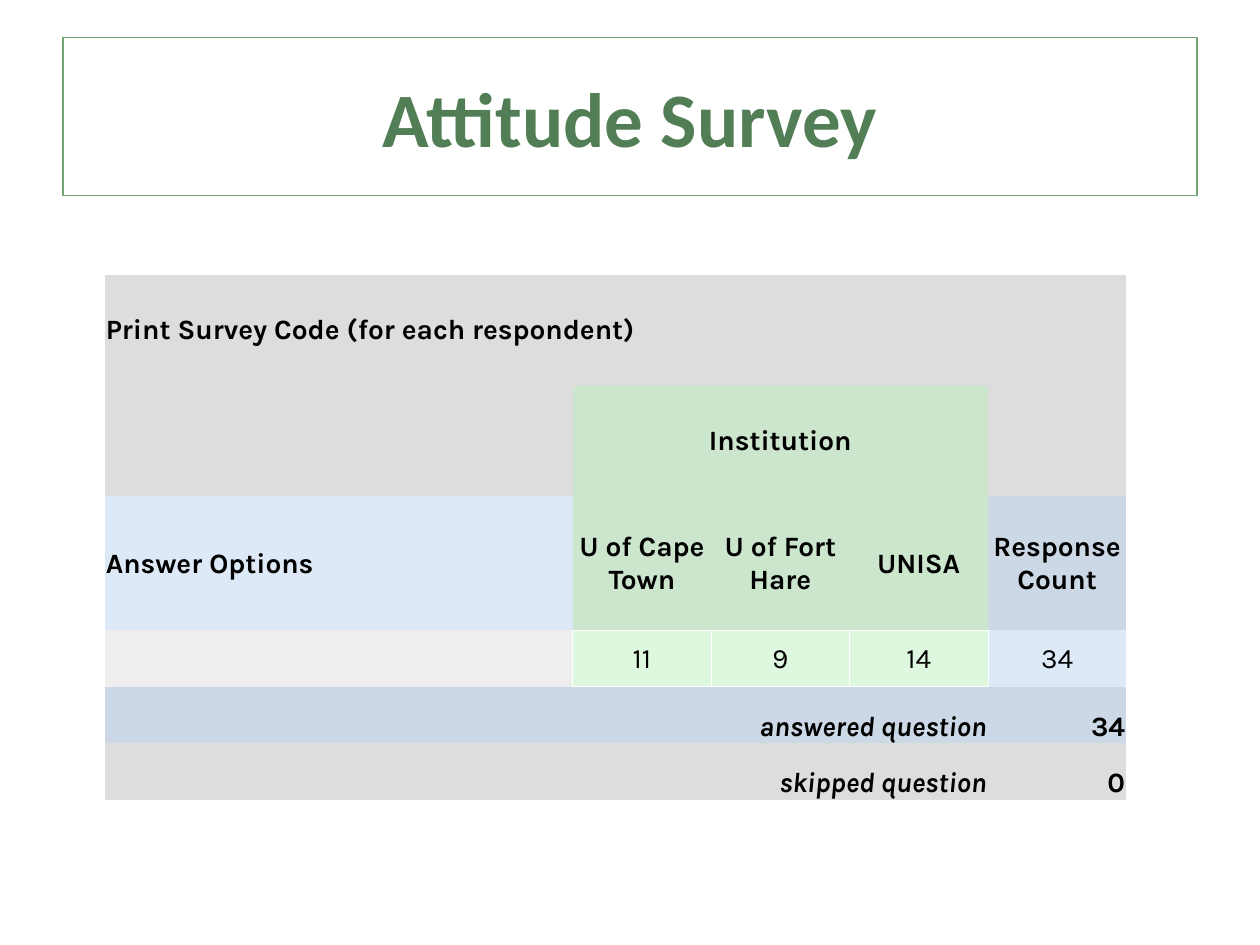
import dataclasses

import lxml.etree
import pptx
import pptx.dml.color
import pptx.enum.text
import pptx.oxml.ns
import pptx.util

Inches = pptx.util.Inches
Pt = pptx.util.Pt
ALIGN = pptx.enum.text.PP_ALIGN
ANCHOR = pptx.enum.text.MSO_ANCHOR
NO_GRID_STYLE = "{2D5ABB26-0587-4C30-8999-92F81FD0307C}"


@dataclasses.dataclass(frozen=True)
class Theme:
    """Colours, fonts and type sizes of the slide."""
    title_font: str = "Calibri"
    table_font: str = "Karla"
    title_size: float = 44
    table_size: float = 16
    title: str = "527E56"
    frame: str = "72A376"
    text: str = "000000"
    rule: str = "FFFFFF"
    grey: str = "DDDDDD"
    pale_grey: str = "EEEEEE"
    green: str = "CCE5CD"
    pale_green: str = "DEF7DF"
    blue: str = "CDD8E6"
    pale_blue: str = "DEE9F7"


THEME = Theme()


@dataclasses.dataclass(frozen=True)
class Entry:
    """Content and look of one table cell."""
    fill: str
    text: str = ""
    align: ALIGN = ALIGN.LEFT
    anchor: ANCHOR = ANCHOR.MIDDLE
    bold: bool = True
    italic: bool = False
    span: int = 1
    rules: str = ""


def rgb(colour):
    """Turn a hex string into a colour."""
    return pptx.dml.color.RGBColor.from_string(colour)


def add_run(paragraph, text, font, size, colour, bold=True, italic=False):
    """Add one formatted run."""
    run = paragraph.add_run()
    run.text = text
    run.font.name = font
    run.font.size = Pt(size)
    run.font.bold = bold
    run.font.italic = italic
    run.font.color.rgb = rgb(colour)


def place_title(slide, text, left, top, width, height):
    """Place the framed title in its box."""
    title = slide.shapes.title
    title.left, title.top, title.width, title.height = left, top, width, height
    title.line.color.rgb = rgb(THEME.frame)
    title.line.width = Pt(0.75)
    title.text_frame.vertical_anchor = ANCHOR.MIDDLE
    heading = title.text_frame.paragraphs[0]
    heading.alignment = ALIGN.CENTER
    add_run(heading, text, THEME.title_font, THEME.title_size, THEME.title)


def add_rules(cell, sides):
    """Draw thin rules on the given sides of a cell, in L, R, T, B order."""
    qn = pptx.oxml.ns.qn
    properties = cell._tc.get_or_add_tcPr()
    for side in sides:
        rule = lxml.etree.SubElement(properties, qn(f"a:ln{side}"), w=str(Pt(0.5)))
        fill = lxml.etree.SubElement(rule, qn("a:solidFill"))
        lxml.etree.SubElement(fill, qn("a:srgbClr"), val=THEME.rule)


def fill_cell(cell, entry):
    """Write and format one cell."""
    cell.margin_left = cell.margin_right = cell.margin_top = Inches(0.01)
    cell.margin_bottom = 0
    cell.vertical_anchor = entry.anchor
    add_rules(cell, entry.rules)
    cell.fill.solid()
    cell.fill.fore_color.rgb = rgb(entry.fill)
    paragraph = cell.text_frame.paragraphs[0]
    paragraph.alignment = entry.align
    if entry.text:
        add_run(paragraph, entry.text, THEME.table_font, THEME.table_size,
                THEME.text, entry.bold, entry.italic)
    else:
        paragraph.font.size = Pt(THEME.table_size)


def total_row(label, count, fill):
    """Return the entries of one summary row."""
    return [Entry(fill, label, ALIGN.RIGHT, ANCHOR.BOTTOM, italic=True, span=4),
            Entry(fill, count, ALIGN.RIGHT, ANCHOR.BOTTOM)]


def survey_rows(institutions):
    """Return the entries of the survey table, row by row."""
    centre = ALIGN.CENTER
    total = str(sum(institutions.values()))
    return [
        [Entry(THEME.grey, "Print Survey Code (for each respondent)", span=5)],
        [Entry(THEME.grey),
         Entry(THEME.green, "Institution", centre, span=len(institutions)),
         Entry(THEME.grey)],
        [Entry(THEME.pale_blue, "Answer Options"),
         *(Entry(THEME.green, name, centre, rules="B") for name in institutions),
         Entry(THEME.blue, "Response Count", centre)],
        [Entry(THEME.pale_grey, rules="R"),
         *(Entry(THEME.pale_green, str(count), centre, bold=False, rules="LRTB")
           for count in institutions.values()),
         Entry(THEME.pale_blue, total, centre, bold=False, rules="L")],
        total_row("answered question", total, THEME.blue),
        total_row("skipped question", "0", THEME.grey),
    ]


def place_survey(slide, rows, left, top, width, height):
    """Place the survey table in its box."""
    column_shares = [3.72, 1.1, 1.1, 1.1, 1.1]
    row_shares = [0.88, 0.88, 1.06, 0.45, 0.45, 0.45]
    table = slide.shapes.add_table(
        len(row_shares), len(column_shares), left, top, width, height).table
    table.first_row = table.horz_banding = False
    table._tbl.tblPr.find(pptx.oxml.ns.qn("a:tableStyleId")).text = NO_GRID_STYLE
    for column, share in zip(table.columns, column_shares):
        column.width = int(width * share / sum(column_shares))
    for row, share in zip(table.rows, row_shares):
        row.height = int(height * share / sum(row_shares))
    for row_index, entries in enumerate(rows):
        column_index = 0
        for entry in entries:
            cell = table.cell(row_index, column_index)
            column_index += entry.span
            if entry.span > 1:
                cell.merge(table.cell(row_index, column_index - 1))
            fill_cell(cell, entry)


def main():
    """Build and save the slide."""
    deck = pptx.Presentation()
    deck.slide_width, deck.slide_height = Inches(10), Inches(7.5)
    slide = deck.slides.add_slide(deck.slide_layouts.get_by_name("Title Only"))
    place_title(slide, "Attitude Survey",
                Inches(0.5), Inches(0.3), Inches(9), Inches(1.25))
    institutions = {"U of Cape Town": 11, "U of Fort Hare": 9, "UNISA": 14}
    place_survey(slide, survey_rows(institutions),
                 Inches(0.83), Inches(2.18), Inches(8.11), Inches(4.17))
    deck.save("out.pptx")


if __name__ == "__main__":
    main()
